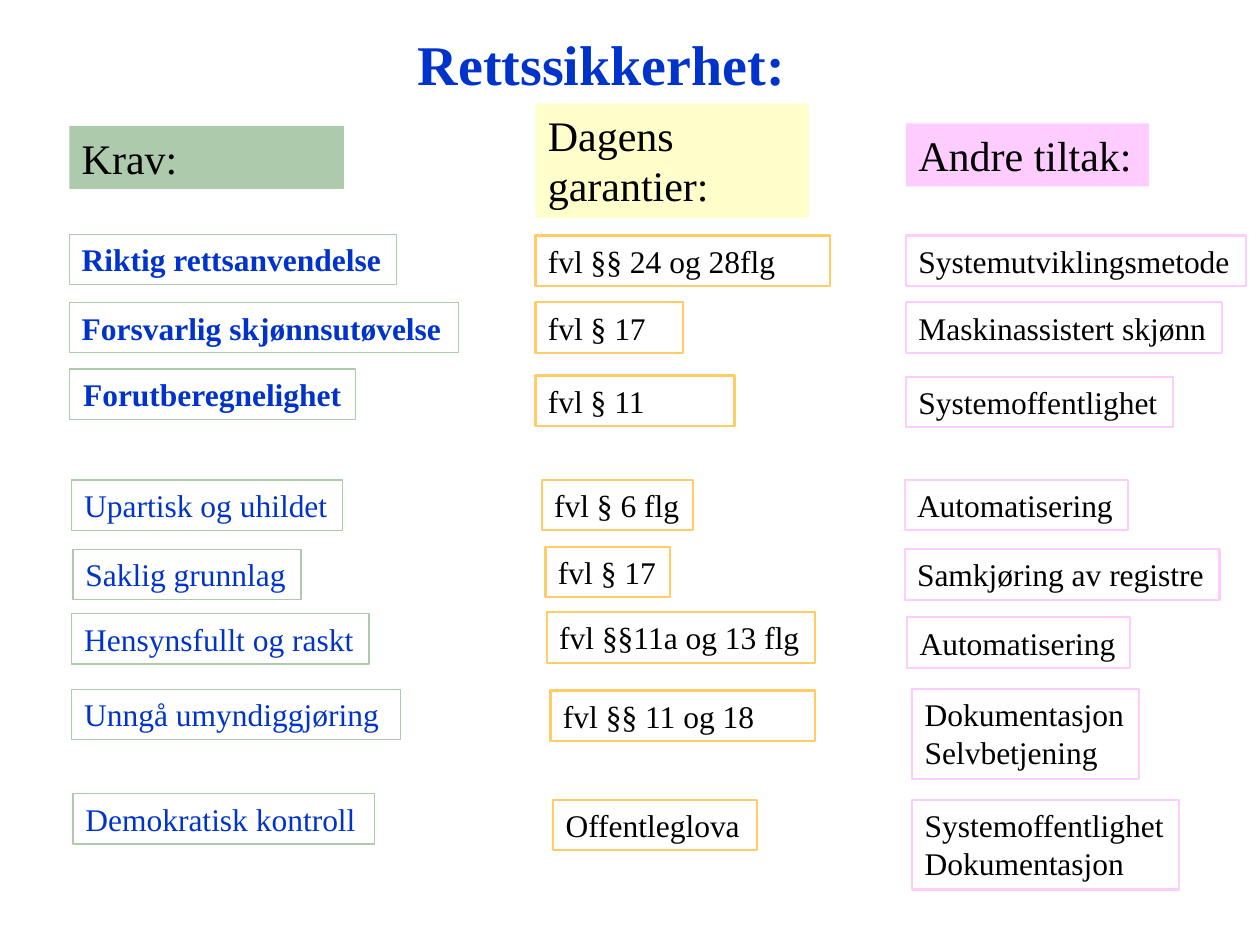
from dataclasses import dataclass

from pptx import Presentation
from pptx.dml.color import RGBColor
from pptx.enum.shapes import MSO_SHAPE
from pptx.enum.text import MSO_ANCHOR, MSO_AUTO_SIZE, PP_ALIGN
from pptx.util import Inches, Pt

RECT = MSO_SHAPE.RECTANGLE
LEFT, CENTER = PP_ALIGN.LEFT, PP_ALIGN.CENTER
MIDDLE, TOP = MSO_ANCHOR.MIDDLE, MSO_ANCHOR.TOP
GROW, FIXED = MSO_AUTO_SIZE.SHAPE_TO_FIT_TEXT, MSO_AUTO_SIZE.NONE


@dataclass(frozen=True)
class Theme:
    font: str = "Times New Roman"
    title: int = 32
    heading: int = 24
    body: int = 18
    blue: str = "0033CC"
    black: str = "000000"
    green: str = "ADCAAD"
    yellow: str = "FFFFCC"
    orange: str = "FFCC66"
    pink: str = "FFCCFF"


T = Theme()
TITLE = "Rettssikkerhet: "
ROW_TOPS = (1.87, 2.4, 2.95, 3.81, 4.36, 4.87, 5.47, 6.35)
LINE_H, BOX_PAD = 0.31, 0.09

# Heading: text, top, width, height, wrap
# Cells, one per row: text, width, shift right, shift down, format
COLUMNS = [
    dict(left=0.55, fill=T.green, line=T.green, weight=0.75, color=T.blue,
         heading=("Krav:", 1, 2.18, 0.5, True),
         cells=[
             ("Riktig rettsanvendelse", 2.6, 0, -0.01, dict(bold=True)),
             ("Forsvarlig skjønnsutøvelse", 3.09, 0, 0, dict(bold=True)),
             ("Forutberegnelighet", 2.27, 0, -0.02, dict(bold=True, align=CENTER)),
             ("Upartisk og uhildet", 2.15, 0.02, 0, {}),
             ("Saklig grunnlag", 1.81, 0.03, 0, {}),
             ("Hensynsfullt og raskt", 2.36, 0.02, 0, {}),
             ("Unngå umyndiggjøring", 2.61, 0.02, 0, dict(wrap=True)),
             ("Demokratisk kontroll", 2.39, 0.03, -0.05, {}),
         ]),
    dict(left=4.25, fill=T.yellow, line=T.orange, weight=1.25, color=T.black,
         heading=("Dagens garantier:", 0.82, 2.17, 0.91, True),
         cells=[
             ("fvl §§ 24 og 28flg", 2.34, 0, 0, dict(wrap=True)),
             ("fvl § 17", 1.17, 0, 0, dict(wrap=True)),
             ("fvl § 11", 1.58, 0, 0.03, dict(wrap=True)),
             ("fvl § 6 flg", 1.2, 0.05, 0, {}),
             ("fvl § 17", 0.99, 0.08, -0.02, {}),
             ("fvl §§11a og 13 flg", 2.13, 0.09, -0.01, {}),
             ("fvl §§ 11 og 18", 2.1, 0.12, 0.01, dict(wrap=True)),
             ("Offentleglova", 1.62, 0.14, 0, {}),
         ]),
    dict(left=7.19, fill=T.pink, line=T.pink, weight=1.25, color=T.black,
         heading=("Andre tiltak:", 0.98, 1.93, 0.5, False),
         cells=[
             ("Systemutviklingsmetode", 2.7, 0, 0, {}),
             ("Maskinassistert skjønn", 2.51, 0, 0, {}),
             ("Systemoffentlighet", 2.12, 0, 0.04, {}),
             ("Automatisering", 1.77, -0.01, 0, {}),
             ("Samkjøring av registre", 2.5, -0.01, 0, {}),
             ("Automatisering", 1.77, 0.01, 0.03, {}),
             ("Dokumentasjon\nSelvbetjening", 1.8, 0.05, 0, {}),
             ("Systemoffentlighet\nDokumentasjon", 2.12, 0.05, 0, {}),
         ]),
]


def write(sp, text, size=T.body, color=T.black, bold=False, align=LEFT,
          anchor=TOP, wrap=False, auto_size=GROW):
    tf = sp.text_frame
    tf.text = text
    tf.word_wrap = wrap
    tf.auto_size = auto_size
    tf.vertical_anchor = anchor
    for p in tf.paragraphs:
        p.alignment = align
        for r in p.runs:
            r.font.name = T.font
            r.font.size = Pt(size)
            r.font.bold = bold
            r.font.color.rgb = RGBColor.from_string(color)


def add_box(slide, left, top, width, height, fill=None, line=None, weight=1):
    sp = slide.shapes.add_shape(RECT, *map(Inches, (left, top, width, height)))
    sp.shadow.inherit = False
    if fill:
        sp.fill.solid()
        sp.fill.fore_color.rgb = RGBColor.from_string(fill)
    else:
        sp.fill.background()
    if line:
        sp.line.color.rgb = RGBColor.from_string(line)
        sp.line.width = Pt(weight)
    else:
        sp.line.fill.background()
    return sp


def add_column(slide, col):
    text, top, width, height, wrap = col["heading"]
    sp = add_box(slide, col["left"], top, width, height, fill=col["fill"])
    write(sp, text, size=T.heading, wrap=wrap)
    for row_top, (text, width, dx, dy, fmt) in zip(ROW_TOPS, col["cells"]):
        height = BOX_PAD + LINE_H * len(text.split("\n"))
        sp = add_box(slide, col["left"] + dx, row_top + dy, width, height,
                     line=col["line"], weight=col["weight"])
        write(sp, text, color=col["color"], **fmt)


def main():
    prs = Presentation()
    prs.slide_width, prs.slide_height = Inches(10), Inches(7.5)
    slide = prs.slides.add_slide(prs.slide_layouts[5])
    title = slide.shapes.title
    title.left, title.top, title.width, title.height = map(
        Inches, (0.58, 0.25, 8.5, 0.5))
    write(title, TITLE, size=T.title, color=T.blue, bold=True, align=CENTER,
          anchor=MIDDLE, wrap=True, auto_size=FIXED)
    for col in COLUMNS:
        add_column(slide, col)
    prs.save("out.pptx")


if __name__ == "__main__":
    main()
